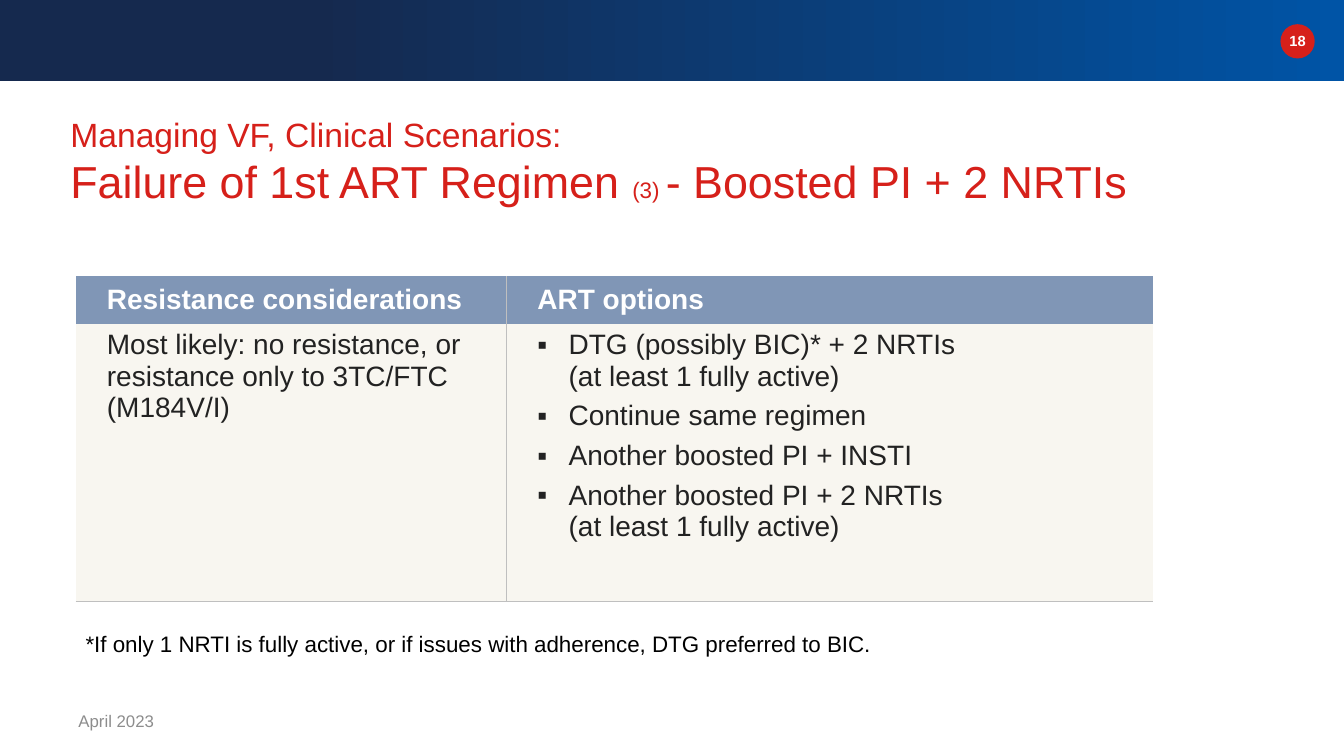
from lxml import etree
from pptx import Presentation
from pptx.dml.color import RGBColor
from pptx.enum import shapes, text
from pptx.oxml import ns
from pptx.util import Inches, Pt

NAVY = RGBColor(0x15, 0x29, 0x4E)
BLUE = RGBColor(0x00, 0x54, 0xA6)
RED = RGBColor(0xD6, 0x20, 0x1A)
WHITE = RGBColor(0xFF, 0xFF, 0xFF)
BLACK = RGBColor(0x00, 0x00, 0x00)
GREY = RGBColor(0x8D, 0x8D, 0x8D)
INK = RGBColor(0x22, 0x22, 0x22)
SLATE = RGBColor(0x80, 0x96, 0xB6)
CREAM = RGBColor(0xF8, 0xF6, 0xF0)
RULE = RGBColor(0xBF, 0xBF, 0xBF)


def write(para, words, size, color, bold=False):
    for number, line in enumerate(words.split("\n")):
        if number:
            para.add_line_break()
        if line:
            span = para.add_run()
            span.text = line
            span.font.name = "Arial"
            span.font.size = Pt(size)
            span.font.bold = bold
            span.font.color.rgb = color


def add_box(left, top, width, height, anchor=text.MSO_ANCHOR.TOP):
    box = page.shapes.add_textbox(Inches(left), Inches(top), Inches(width), Inches(height))
    box.text_frame.word_wrap = True
    box.text_frame.vertical_anchor = anchor
    return box.text_frame.paragraphs[0]


deck = Presentation()
deck.slide_width = Inches(13.33)
deck.slide_height = Inches(7.5)
page = deck.slides.add_slide(deck.slide_layouts[6])

band = page.shapes.add_shape(shapes.MSO_SHAPE.RECTANGLE, 0, 0, deck.slide_width, Inches(0.8))
band.shadow.inherit = False
band.line.fill.background()
band.fill.gradient()
band.fill.gradient_angle = 0
for stop, position, color in zip(band.fill.gradient_stops, (0.23, 1), (NAVY, BLUE)):
    stop.position = position
    stop.color.rgb = color

badge = page.shapes.add_shape(
    shapes.MSO_SHAPE.OVAL, Inches(12.7), Inches(0.24), Inches(0.34), Inches(0.34))
badge.shadow.inherit = False
badge.line.fill.background()
badge.fill.solid()
badge.fill.fore_color.rgb = RED
para = add_box(12.65, 0.27, 0.44, 0.28)
para.alignment = text.PP_ALIGN.CENTER
write(para, "18", 10.5, WHITE, bold=True)

title = add_box(0.6, 1.08, 11.5, 1.39)
for words, size in (("Managing VF, Clinical Scenarios:\n", 24),
                    ("Failure of 1st ART Regimen ", 32),
                    ("(3) ", 16),
                    ("- Boosted PI + 2 NRTIs", 32)):
    write(title, words, size, RED)

frame = page.shapes.add_table(2, 2, Inches(0.75), Inches(2.74), Inches(10.69), Inches(3.23))
table = frame.table
table.horz_banding = False
table.first_row = False
style = table._tbl.tblPr.find(ns.qn("a:tableStyleId"))
style.text = "{2D5ABB26-0587-4C30-8999-92F81FD0307C}"
for column, width in zip(table.columns, (4.27, 6.42)):
    column.width = Inches(width)
for row, height in zip(table.rows, (0.47, 2.76)):
    row.height = Inches(height)

options = ["DTG (possibly BIC)* + 2 NRTIs\n(at least 1 fully active)",
           "Continue same regimen",
           "Another boosted PI + INSTI",
           "Another boosted PI + 2 NRTIs\n(at least 1 fully active)"]
contents = [
    [["Resistance considerations"], ["ART options"]],
    [["Most likely: no resistance, or resistance only to 3TC/FTC (M184V/I)"], options],
]
for row, entries in enumerate(contents):
    header = row == 0
    for col, lines in enumerate(entries):
        cell = table.cell(row, col)
        cell.margin_left = cell.margin_right = Inches(0.31)
        cell.margin_top = cell.margin_bottom = Inches(0.06)
        cell.vertical_anchor = text.MSO_ANCHOR.MIDDLE if header else text.MSO_ANCHOR.TOP
        edges = ["lnL" if col else "lnR"] + ([] if header else ["lnB"])
        for edge in edges:
            line = etree.SubElement(cell._tc.get_or_add_tcPr(), ns.qn("a:" + edge), w=str(Pt(1)))
            solid = etree.SubElement(line, ns.qn("a:solidFill"))
            etree.SubElement(solid, ns.qn("a:srgbClr"), val=str(RULE))
        cell.fill.solid()
        cell.fill.fore_color.rgb = SLATE if header else CREAM
        for number, words in enumerate(lines):
            body = cell.text_frame
            para = body.add_paragraph() if number else body.paragraphs[0]
            if header:
                para.line_spacing = 1.02
            if lines is options:
                para.space_after = Pt(6)
                props = para._p.get_or_add_pPr()
                props.set("marL", str(Inches(0.31)))
                props.set("indent", str(-Inches(0.31)))
                tint = etree.SubElement(props, ns.qn("a:buClr"))
                etree.SubElement(tint, ns.qn("a:srgbClr"), val=str(INK))
                etree.SubElement(props, ns.qn("a:buFont"), typeface="Arial")
                etree.SubElement(props, ns.qn("a:buChar"), char="▪")
            write(para, words, 20, WHITE if header else INK, bold=header)

write(add_box(0.68, 6.95, 3, 0.4, text.MSO_ANCHOR.MIDDLE), "April 2023", 12, GREY)
write(add_box(0.75, 6.2, 8.42, 0.37),
      "*If only 1 NRTI is fully active, or if issues with adherence, DTG preferred to BIC.",
      16, BLACK)

deck.save("out.pptx")
